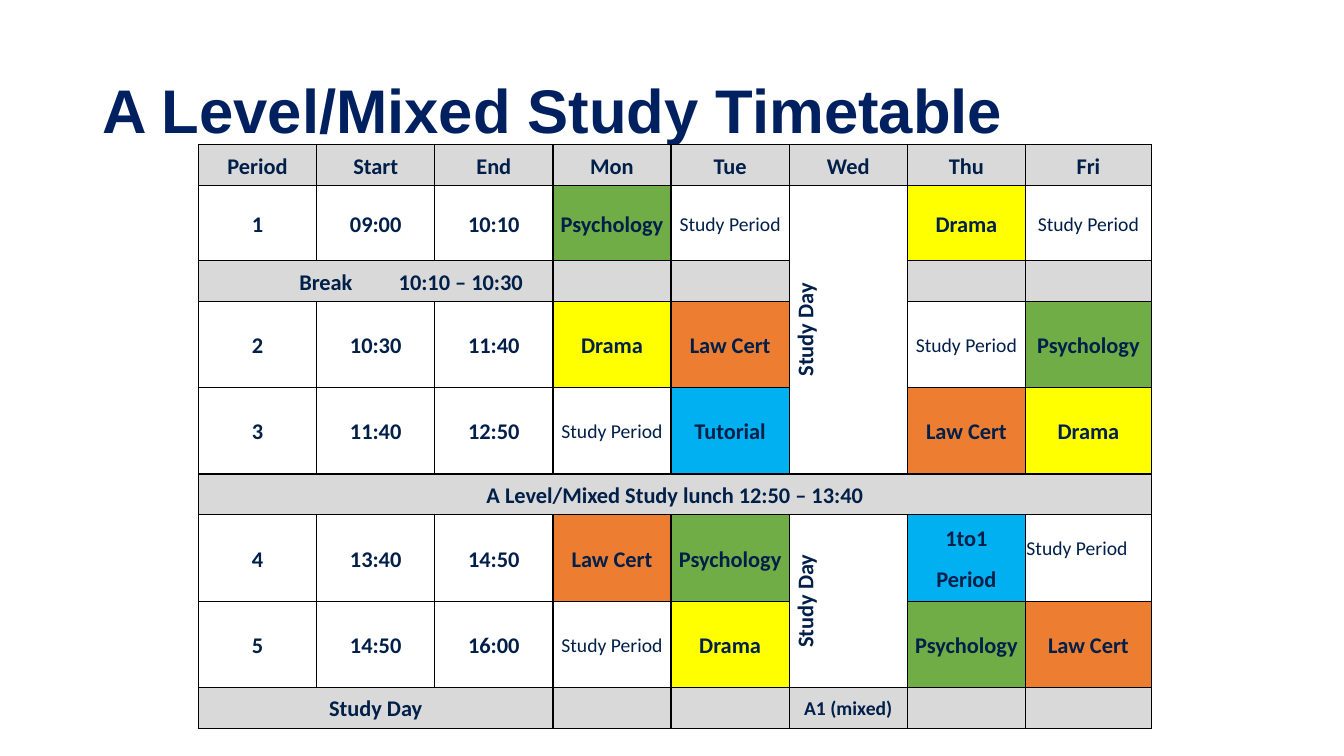
import lxml.etree
import pptx
import pptx.dml.color
import pptx.enum.text
import pptx.oxml.ns
import pptx.util

Pt = pptx.util.Pt
ALIGN = pptx.enum.text.PP_ALIGN
MIDDLE = pptx.enum.text.MSO_ANCHOR.MIDDLE

# Content: one tuple per timetable row, "" where a cell is empty or spanned
HEADING = "A Level/Mixed Study Timetable"
STUDY = "Study Period"
TIMETABLE = [
    ("Period", "Start", "End", "Mon", "Tue", "Wed", "Thu", "Fri"),
    ("1", "09:00", "10:10", "Psychology", STUDY, "Study Day", "Drama", STUDY),
    ("Break\t10:10 – 10:30", "", "", "", "", "", "", ""),
    ("2", "10:30", "11:40", "Drama", "Law Cert", "", STUDY, "Psychology"),
    ("3", "11:40", "12:50", STUDY, "Tutorial", "", "Law Cert", "Drama"),
    ("A Level/Mixed Study lunch 12:50 – 13:40", "", "", "", "", "", "", ""),
    ("4", "13:40", "14:50", "Law Cert", "Psychology", "Study Day", "1to1\nPeriod", STUDY),
    ("5", "14:50", "16:00", STUDY, "Drama", "", "Psychology", "Law Cert"),
    ("Study Day", "", "", "", "", "A1 (mixed)", "", ""),
]
SPANS = [((1, 5), (4, 5)), ((2, 0), (2, 2)), ((5, 0), (5, 7)),
         ((6, 5), (7, 5)), ((8, 0), (8, 2))]
BREAK_CELL, LATE_STUDY_CELL = (2, 0), (6, 7)
VERTICAL_CELLS = [(1, 5), (6, 5)]

# Look
SUBJECT_FILLS = {"Psychology": "70AD47", "Drama": "FFFF00", "Law Cert": "ED7D31",
                 "Tutorial": "00B0F0", "1to1\nPeriod": "00B0F0"}
BAND_ROWS = (0, 2, 5, 8)
BAND_FILL, PLAIN_FILL, BORDER = "D9D9D9", "FFFFFF", "000000"
HEADING_FONT = {"name": "Arial", "size": Pt(44), "bold": True}
LESSON_FONT = {"name": "Calibri", "size": Pt(16), "bold": True}
SMALL_FONTS = {STUDY: {"size": Pt(14), "bold": False}, "A1 (mixed)": {"size": Pt(14)}}
CELL_FORMAT = {"margin_left": Pt(0.7), "margin_right": Pt(0.7), "margin_top": Pt(0.7),
               "margin_bottom": Pt(0), "vertical_anchor": MIDDLE}
CELL_EXCEPTIONS = {BREAK_CELL: {"margin_left": Pt(72)},
                   LATE_STUDY_CELL: {"margin_bottom": Pt(15)}}
BREAK_TAB = 71

# Sizes
BAND_HEIGHT, FIRST_HEIGHT, LESSON_HEIGHT = 29.2, 53.7, 61.6
HEIGHTS = [BAND_HEIGHT if row in BAND_ROWS else FIRST_HEIGHT if row == 1 else LESSON_HEIGHT
           for row in range(len(TIMETABLE))]
WIDTHS = [84.4] * 7 + [89.9]


def colour(hex_value):
    return pptx.dml.color.RGBColor.from_string(hex_value)


def apply(target, values):
    for name, value in values.items():
        setattr(target, name, value)


def add_child(parent, tag, **attributes):
    return lxml.etree.SubElement(parent, pptx.oxml.ns.qn(tag), **attributes)


def add_borders(cell):
    properties = cell._tc.get_or_add_tcPr()
    for side in ("a:lnL", "a:lnR", "a:lnT", "a:lnB"):
        line = add_child(properties, side, w=str(Pt(1)))
        add_child(add_child(line, "a:solidFill"), "a:srgbClr", val=BORDER)


def write_cell(cell, words, place):
    left_aligned = place in (BREAK_CELL, LATE_STUDY_CELL)
    frame = cell.text_frame
    frame.text = words
    for paragraph in frame.paragraphs:
        apply(paragraph, {"alignment": ALIGN.LEFT if left_aligned else ALIGN.CENTER,
                          "line_spacing": 1.07, "space_after": Pt(8)})
        for run in paragraph.runs:
            apply(run.font, {**LESSON_FONT, **SMALL_FONTS.get(words, {})})
            run.font.color.rgb = colour("001F49")
    if place == BREAK_CELL:
        tabs = add_child(frame.paragraphs[0]._p.get_or_add_pPr(), "a:tabLst")
        add_child(tabs, "a:tab", pos=str(Pt(BREAK_TAB)), algn="l")


presentation = pptx.Presentation()
apply(presentation, {"slide_width": Pt(960), "slide_height": Pt(540)})
slide = presentation.slides.add_slide(presentation.slide_layouts[5])

# Heading
heading = slide.shapes.title
apply(heading, {"left": Pt(66), "top": Pt(28.75), "width": Pt(828), "height": Pt(104.4)})
heading.text_frame.text = HEADING
heading.text_frame.vertical_anchor = MIDDLE
heading_line = heading.text_frame.paragraphs[0]
apply(heading_line, {"alignment": ALIGN.LEFT, "line_spacing": 0.9})
apply(heading_line.runs[0].font, HEADING_FONT)
heading_line.runs[0].font.color.rgb = colour("002060")

# Timetable grid
timetable = slide.shapes.add_table(len(HEIGHTS), len(WIDTHS), Pt(141.8), Pt(103.3),
                                   Pt(sum(WIDTHS)), Pt(sum(HEIGHTS))).table
apply(timetable, {"first_row": False, "horz_banding": False})
for column, width in zip(timetable.columns, WIDTHS):
    column.width = Pt(width)
for row, height in zip(timetable.rows, HEIGHTS):
    row.height = Pt(height)
for first, last in SPANS:
    timetable.cell(*first).merge(timetable.cell(*last))

# Timetable cells
for row, lessons in enumerate(TIMETABLE):
    for column, words in enumerate(lessons):
        place = (row, column)
        cell = timetable.cell(*place)
        apply(cell, {**CELL_FORMAT, **CELL_EXCEPTIONS.get(place, {})})
        add_borders(cell)
        cell.fill.solid()
        usual_fill = BAND_FILL if row in BAND_ROWS else PLAIN_FILL
        cell.fill.fore_color.rgb = colour(SUBJECT_FILLS.get(words, usual_fill))
        if words:
            write_cell(cell, words, place)
        if place in VERTICAL_CELLS:
            cell._tc.get_or_add_tcPr().set("vert", "vert270")

presentation.save("out.pptx")
